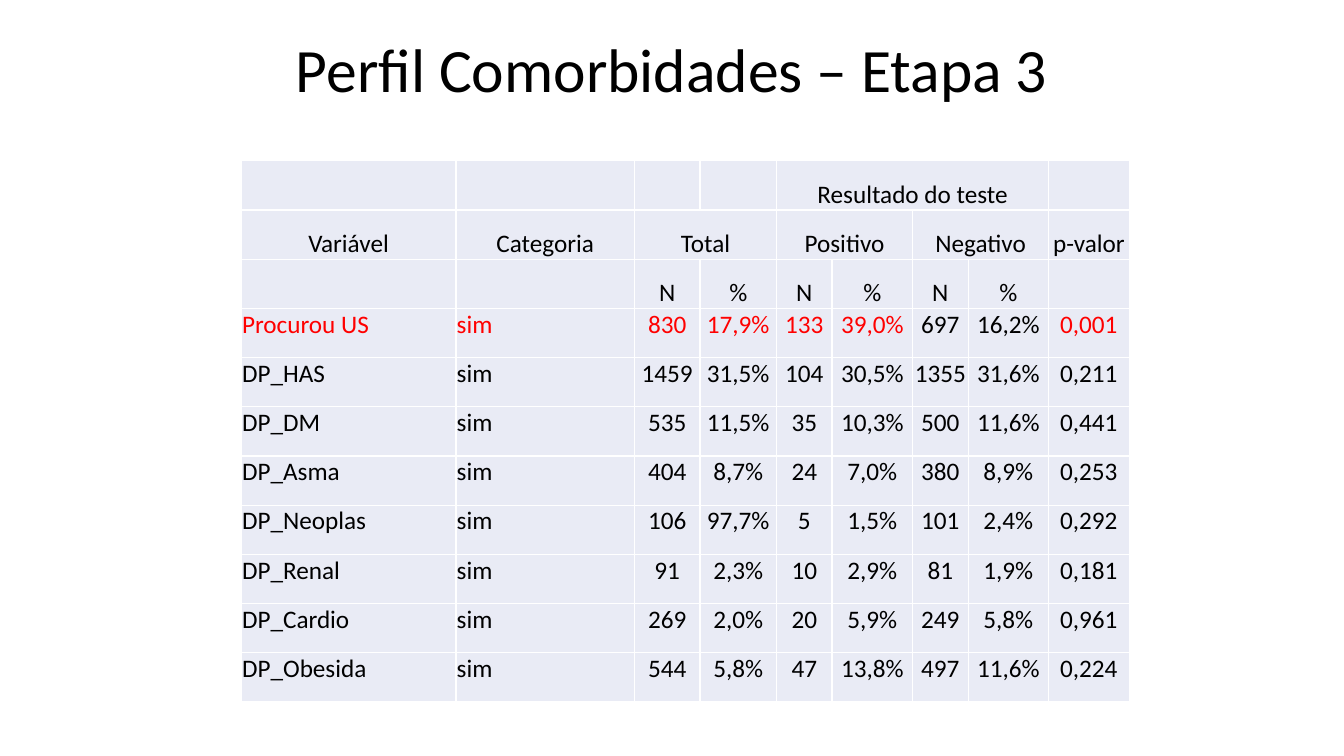
from dataclasses import dataclass

from lxml import etree
from pptx import Presentation
from pptx.dml.color import RGBColor
from pptx.enum.text import MSO_ANCHOR, MSO_AUTO_SIZE, PP_ALIGN
from pptx.oxml.ns import qn
from pptx.slide import Slide
from pptx.table import Table, _Cell
from pptx.text.text import _Paragraph
from pptx.util import Cm, Pt

LEFT, CENTER = PP_ALIGN.LEFT, PP_ALIGN.CENTER
TOP, MIDDLE, BOTTOM = MSO_ANCHOR.TOP, MSO_ANCHOR.MIDDLE, MSO_ANCHOR.BOTTOM
NO_AUTOFIT = MSO_AUTO_SIZE.NONE

BLACK = RGBColor(0x00, 0x00, 0x00)
RED = RGBColor(0xFF, 0x00, 0x00)
WHITE = RGBColor(0xFF, 0xFF, 0xFF)
PALE_BLUE = RGBColor(0xE9, 0xEB, 0xF5)

FONT = "Calibri"
TITLE_ONLY = 5
ROW_HEIGHT = 1.24
COLUMN_WIDTHS = (5.41, 4.5, 1.65, 1.93, 1.4, 2.03, 1.4, 2.03, 2.03)
LABEL_COLUMNS = 2
NEGATIVE_COLUMNS = (6, 7)
HIGHLIGHTED = "Procurou US"


@dataclass(frozen=True)
class Heading:
    row: int
    column: int
    text: str
    span: int = 1


@dataclass(frozen=True)
class Comorbidity:
    variable: str
    total: tuple[str, str]
    positive: tuple[str, str]
    negative: tuple[str, str]
    p_value: str

    def texts(self) -> tuple[str, ...]:
        return (self.variable, "sim", *self.total, *self.positive, *self.negative, self.p_value)


HEADINGS = [
    Heading(0, 4, "Resultado do teste", 4),
    Heading(1, 0, "Variável"),
    Heading(1, 1, "Categoria"),
    Heading(1, 2, "Total", 2),
    Heading(1, 4, "Positivo", 2),
    Heading(1, 6, "Negativo", 2),
    Heading(1, 8, "p-valor"),
    *(Heading(2, column, "N%"[column % 2]) for column in range(2, 8)),
]
HEADING_ROWS = 3

COMORBIDITIES = [
    Comorbidity(HIGHLIGHTED, ("830", "17,9%"), ("133", "39,0%"), ("697", "16,2%"), "0,001"),
    Comorbidity("DP_HAS", ("1459", "31,5%"), ("104", "30,5%"), ("1355", "31,6%"), "0,211"),
    Comorbidity("DP_DM", ("535", "11,5%"), ("35", "10,3%"), ("500", "11,6%"), "0,441"),
    Comorbidity("DP_Asma", ("404", "8,7%"), ("24", "7,0%"), ("380", "8,9%"), "0,253"),
    Comorbidity("DP_Neoplas", ("106", "97,7%"), ("5", "1,5%"), ("101", "2,4%"), "0,292"),
    Comorbidity("DP_Renal", ("91", "2,3%"), ("10", "2,9%"), ("81", "1,9%"), "0,181"),
    Comorbidity("DP_Cardio", ("269", "2,0%"), ("20", "5,9%"), ("249", "5,8%"), "0,961"),
    Comorbidity("DP_Obesida", ("544", "5,8%"), ("47", "13,8%"), ("497", "11,6%"), "0,224"),
]


def format_paragraph(para: _Paragraph, size: int, color: RGBColor, align: PP_ALIGN) -> None:
    para.alignment = align
    for span in para.runs:
        span.font.name = FONT
        span.font.size = Pt(size)
        span.font.color.rgb = color


def write_title(page: Slide, text: str) -> None:
    box = page.shapes.title
    box.left, box.top, box.width, box.height = Cm(2.33), Cm(0), Cm(29.21), Cm(3.68)
    frame = box.text_frame
    frame.text = text
    frame.vertical_anchor = MIDDLE
    frame.auto_size = NO_AUTOFIT
    para = frame.paragraphs[0]
    para.line_spacing = 0.9
    format_paragraph(para, 44, BLACK, CENTER)


def style_cell(cell: _Cell) -> None:
    cell.margin_left = cell.margin_right = cell.margin_top = Cm(0.02)
    cell.margin_bottom = Cm(0)
    properties = cell._tc.get_or_add_tcPr()
    for side in ("a:lnL", "a:lnR", "a:lnT", "a:lnB"):
        border = etree.SubElement(properties, qn(side), w=str(Pt(1)))
        fill = etree.SubElement(border, qn("a:solidFill"))
        etree.SubElement(fill, qn("a:srgbClr"), val=str(WHITE))
    cell.fill.solid()
    cell.fill.fore_color.rgb = PALE_BLUE


def write_cell(cell: _Cell, text: str, color: RGBColor, align: PP_ALIGN, anchor: MSO_ANCHOR) -> None:
    cell.text_frame.text = text
    cell.vertical_anchor = anchor
    format_paragraph(cell.text_frame.paragraphs[0], 18, color, align)


def write_headings(table: Table) -> None:
    for heading in HEADINGS:
        cell = table.cell(heading.row, heading.column)
        if heading.span > 1:
            cell.merge(table.cell(heading.row, heading.column + heading.span - 1))
        write_cell(cell, heading.text, BLACK, CENTER, BOTTOM)


def write_comorbidities(table: Table) -> None:
    for row, comorbidity in enumerate(COMORBIDITIES, HEADING_ROWS):
        for column, text in enumerate(comorbidity.texts()):
            marked = comorbidity.variable == HIGHLIGHTED and column not in NEGATIVE_COLUMNS
            align = LEFT if column < LABEL_COLUMNS else CENTER
            write_cell(table.cell(row, column), text, RED if marked else BLACK, align, TOP)


def add_comorbidity_table(page: Slide) -> None:
    row_count = HEADING_ROWS + len(COMORBIDITIES)
    table = page.shapes.add_table(
        row_count, len(COLUMN_WIDTHS), Cm(6.08), Cm(4.05),
        Cm(sum(COLUMN_WIDTHS)), Cm(ROW_HEIGHT * row_count),
    ).table
    table.first_row = False
    table.horz_banding = False
    for column, width in zip(table.columns, COLUMN_WIDTHS):
        column.width = Cm(width)
    for row in table.rows:
        row.height = Cm(ROW_HEIGHT)
    for cell in table.iter_cells():
        style_cell(cell)
    write_headings(table)
    write_comorbidities(table)


def main() -> None:
    deck = Presentation()
    deck.slide_width, deck.slide_height = Cm(33.87), Cm(19.05)
    page = deck.slides.add_slide(deck.slide_layouts[TITLE_ONLY])
    write_title(page, "Perfil Comorbidades – Etapa 3")
    add_comorbidity_table(page)
    deck.save("out.pptx")


if __name__ == "__main__":
    main()
